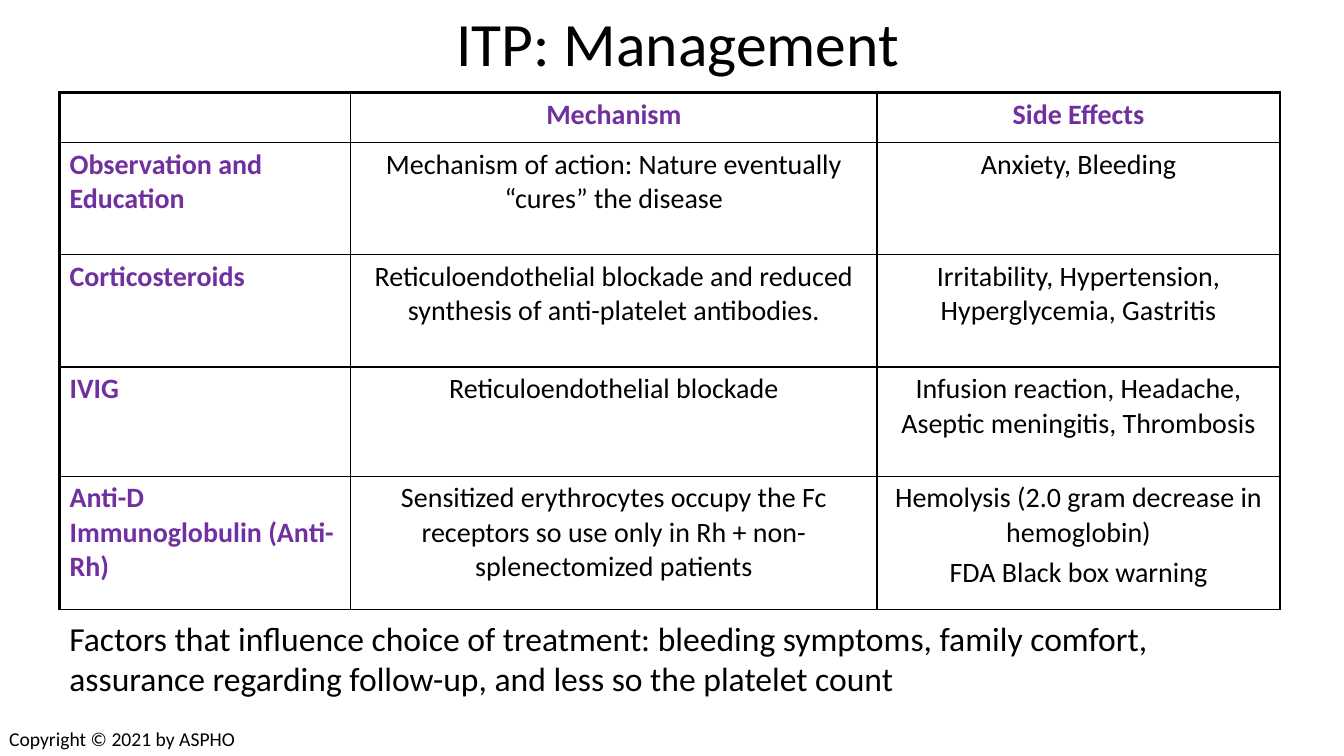
from lxml import etree
from pptx import Presentation
from pptx.dml.color import RGBColor
from pptx.enum import text as t
from pptx.oxml import ns
from pptx.util import Cm, Pt

BLACK = RGBColor(0x00, 0x00, 0x00)
PURPLE = RGBColor(0x70, 0x30, 0xA0)
FONT = "Calibri"
THIN, THICK = Pt(1), Pt(2.25)
LEFT, CENTER = t.PP_ALIGN.LEFT, t.PP_ALIGN.CENTER

COLUMN_WIDTHS = [7.34, 13.26, 10.16]
ROW_HEIGHTS = [1.25, 2.83, 2.83, 2.75, 3.36]
TREATMENTS = [
    ["", "Mechanism", "Side Effects"],
    ["Observation and Education",
     "Mechanism of action: Nature eventually “cures” the disease",
     "Anxiety, Bleeding"],
    ["Corticosteroids",
     "Reticuloendothelial blockade and reduced synthesis of anti-platelet antibodies.",
     "Irritability, Hypertension, Hyperglycemia, Gastritis"],
    ["IVIG",
     "Reticuloendothelial blockade",
     "Infusion reaction, Headache, Aseptic meningitis, Thrombosis"],
    ["Anti-D Immunoglobulin (Anti-Rh)",
     "Sensitized erythrocytes occupy the Fc receptors so use only in Rh + non-splenectomized patients",
     "Hemolysis (2.0 gram decrease in hemoglobin)\nFDA Black box warning"],
]


def write(frame, wording, size, color=BLACK, align=LEFT, bold=False):
    frame.text = wording
    for number, para in enumerate(frame.paragraphs):
        para.alignment = align
        if number:
            para.space_before = Pt(size * 0.2)
        formats = {"name": FONT, "size": Pt(size), "bold": bold}
        for name, value in formats.items():
            setattr(para.font, name, value)
        para.font.color.rgb = color


def add_title(page, box):
    title = page.shapes.title
    title.left, title.top, title.width, title.height = map(Cm, box)
    frame = title.text_frame
    frame.vertical_anchor = t.MSO_ANCHOR.MIDDLE
    frame.auto_size = t.MSO_AUTO_SIZE.NONE
    write(frame, "ITP: Management", 44, align=CENTER)
    para = frame.paragraphs[0]
    para.line_spacing = 0.9
    properties = para._p.get_or_add_pPr()
    properties.set("marL", str(Cm(0.3)))
    properties.set("indent", "0")


def add_borders(cell, widths):
    """Draw the cell's lines; widths maps a side (L, R, T, B) to its width."""
    properties = cell._tc.get_or_add_tcPr()
    for side, width in widths.items():
        line = etree.SubElement(properties, ns.qn(f"a:ln{side}"), w=str(width))
        fill = etree.SubElement(line, ns.qn("a:solidFill"))
        etree.SubElement(fill, ns.qn("a:srgbClr"), val=str(BLACK))


def add_treatment_table(page, left, top):
    table = page.shapes.add_table(
        len(ROW_HEIGHTS), len(COLUMN_WIDTHS), Cm(left), Cm(top),
        Cm(sum(COLUMN_WIDTHS)), Cm(sum(ROW_HEIGHTS))).table
    table.first_row = table.horz_banding = False
    for column, width in zip(table.columns, COLUMN_WIDTHS):
        column.width = Cm(width)
    last = len(COLUMN_WIDTHS) - 1
    for r, (row, height) in enumerate(zip(table.rows, ROW_HEIGHTS)):
        row.height = Cm(height)
        for c, cell in enumerate(row.cells):
            heading = r == 0 or c == 0
            write(cell.text_frame, TREATMENTS[r][c], 20,
                  color=PURPLE if heading else BLACK,
                  align=CENTER if c else LEFT, bold=heading)
            add_borders(cell, {"L": THIN if c else THICK,
                               "R": THICK if c == last else THIN,
                               "T": THIN if r else THICK,
                               "B": THIN})
            cell.fill.background()


def add_note(page, box, wording, size, wrap):
    frame = page.shapes.add_textbox(*map(Cm, box)).text_frame
    frame.word_wrap = wrap
    frame.auto_size = t.MSO_AUTO_SIZE.SHAPE_TO_FIT_TEXT
    write(frame, wording, size)


def build_management_slide(deck):
    page = deck.slides.add_slide(deck.slide_layouts[5])
    add_title(page, (0, 0, 33.87, 2.34))
    add_treatment_table(page, 1.5, 2.34)
    add_note(page, (1.5, 15.44, 30.76, 2.31),
             "Factors that influence choice of treatment: bleeding symptoms, family comfort, "
             "assurance regarding follow-up, and less so the platelet count", 24, True)
    add_note(page, (-0.02, 18.19, 6.3, 0.86), "Copyright © 2021 by ASPHO", 14, False)


def main():
    deck = Presentation()
    deck.slide_width, deck.slide_height = Cm(33.87), Cm(19.05)
    build_management_slide(deck)
    deck.save("out.pptx")


if __name__ == "__main__":
    main()
